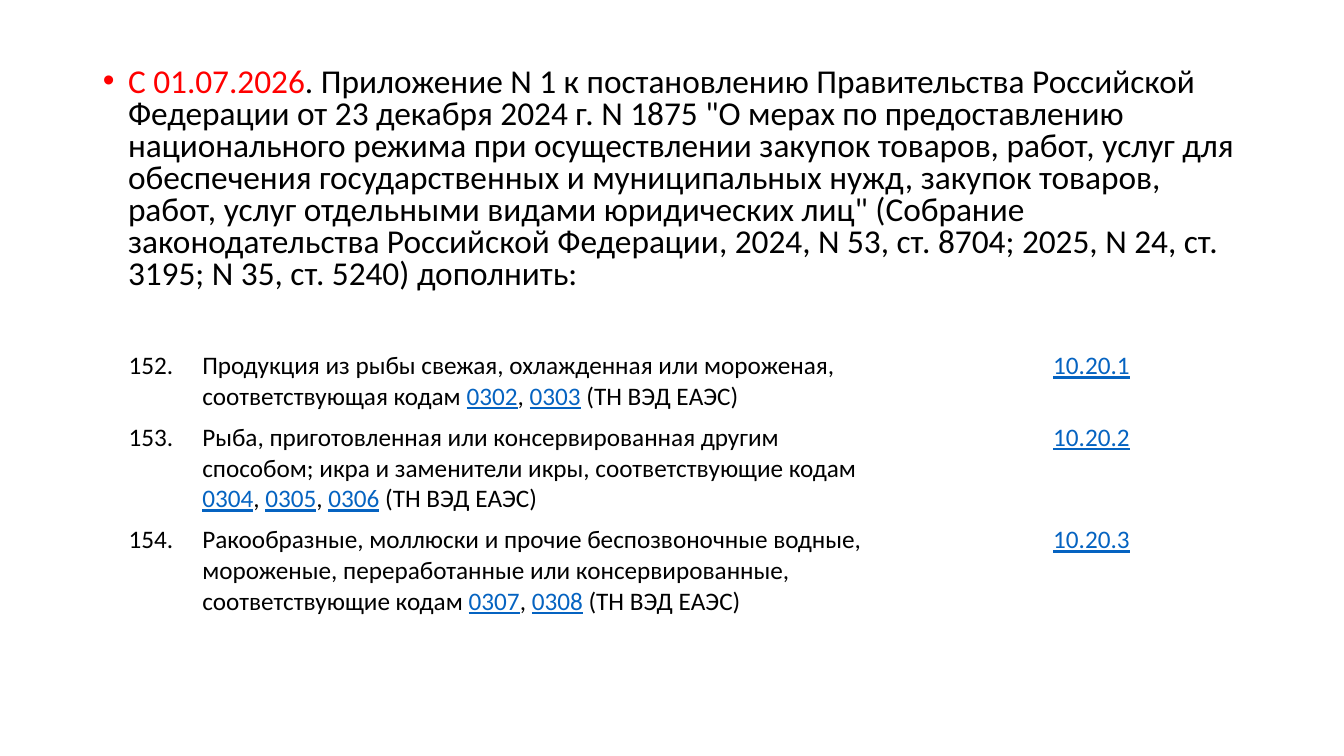
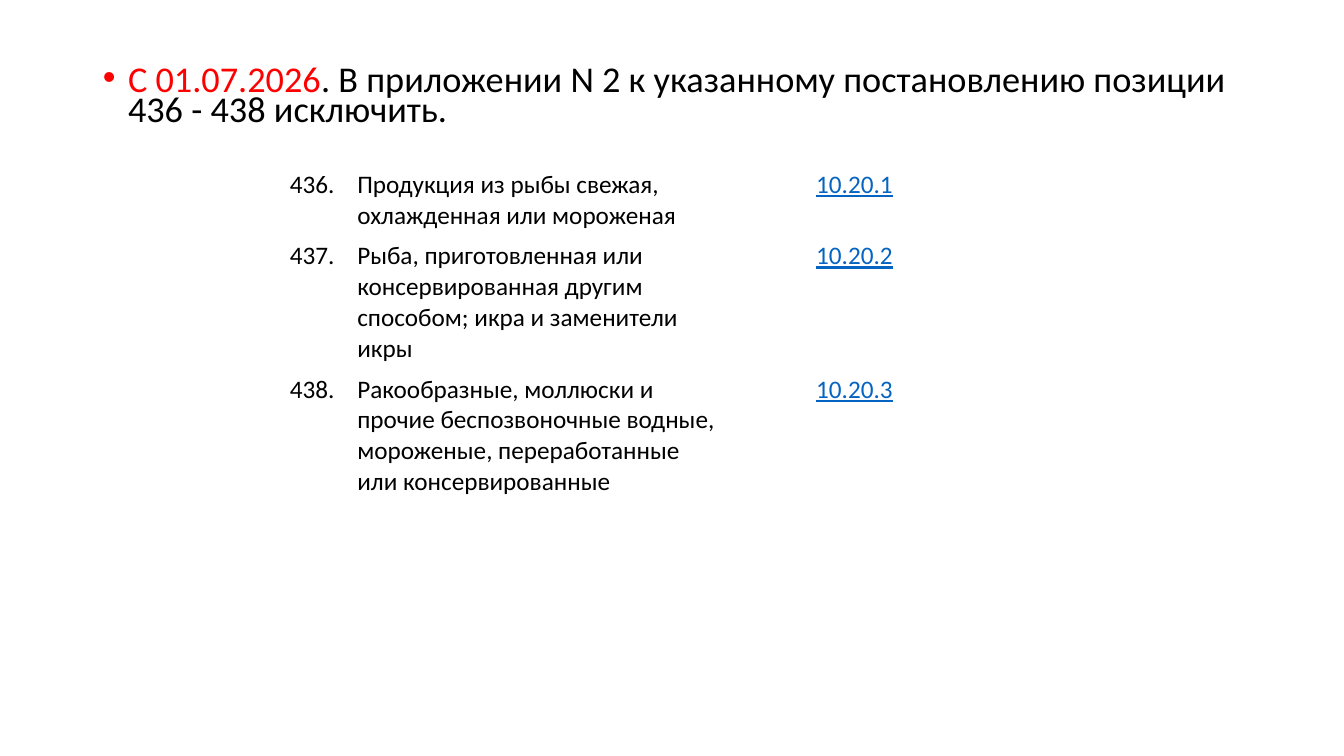
from lxml import etree
from pptx import Presentation
from pptx import util as u
from pptx.dml.color import RGBColor
from pptx.enum import text
from pptx.oxml import ns

COLORS = {"ink": "000000", "date": "FF0000", "code": "0563C1", "paper": "FFFFFF"}
FONT = "Calibri"
WIDTH, HEIGHT = 13.33, 7.5
START_DATE = "С 01.07.2026"
TABLE_SIZE = 18


def color(name):
    return RGBColor.from_string(COLORS[name])


def add_runs(paragraph, pieces, size):
    """Fill a paragraph with (wording, colour name) pieces; codes are underlined."""
    for wording, tone in pieces:
        run = paragraph.add_run()
        run.text = wording
        run.font.name, run.font.size = FONT, u.Pt(size)
        run.font.color.rgb = color(tone)
        run.font.underline = tone == "code"


def add_bullet(paragraph, tone, indent=0.25):
    props = paragraph._p.get_or_add_pPr()
    props.set("marL", str(u.Inches(indent)))
    props.set("indent", str(-u.Inches(indent)))
    bullet_color = etree.SubElement(props, ns.qn("a:buClr"))
    etree.SubElement(bullet_color, ns.qn("a:srgbClr"), val=COLORS[tone])
    etree.SubElement(props, ns.qn("a:buFont"), typeface="Arial")
    etree.SubElement(props, ns.qn("a:buChar"), char="•")


def fill_lead(body, box, wording, size, spacing):
    """Lead paragraph: red date followed by the amendment."""
    body.left, body.top, body.width, body.height = map(u.Inches, box)
    frame = body.text_frame
    frame.word_wrap = True
    frame.auto_size = text.MSO_AUTO_SIZE.NONE
    frame.vertical_anchor = text.MSO_ANCHOR.TOP
    lead = frame.paragraphs[0]
    add_bullet(lead, "date")
    lead.line_spacing, lead.space_before = spacing, u.Pt(0)
    add_runs(lead, [(START_DATE, "date"), (wording, "ink")], size)


def goods_pieces(goods, customs_codes):
    """Goods wording, with the customs codes it corresponds to, if any."""
    pieces = [(goods, "ink")]
    for position, code in enumerate(customs_codes):
        pieces += [(", " if position else " ", "ink"), (code, "code")]
    if customs_codes:
        pieces.append((" (ТН ВЭД ЕАЭС)", "ink"))
    return pieces


def add_positions(slide, box, shares, first_number, row_heights, positions):
    """Table of numbered positions: number, goods, product code."""
    table = slide.shapes.add_table(len(positions), len(shares), *map(u.Inches, box)).table
    table.first_row = table.horz_banding = False
    for column, share in zip(table.columns, shares):
        column.width = u.Inches(box[2] * share)
    for index, (goods, customs_codes) in enumerate(positions):
        table.rows[index].height = u.Inches(row_heights[index])
        contents = [
            [(f"{first_number + index}.", "ink")],
            goods_pieces(goods, customs_codes),
            [(f"10.20.{index + 1}", "code")],
        ]
        for column, pieces in enumerate(contents):
            cell = table.cell(index, column)
            cell.fill.solid()
            cell.fill.fore_color.rgb = color("paper")
            paragraph = cell.text_frame.paragraphs[0]
            if column != 1:
                paragraph.alignment = text.PP_ALIGN.CENTER
            add_runs(paragraph, pieces, TABLE_SIZE)


def add_amendment(deck, lead, positions):
    """One slide: lead paragraph above a table of positions."""
    slide = deck.slides.add_slide(deck.slide_layouts[1])
    title = slide.shapes.title
    title.element.getparent().remove(title.element)
    left, top, width = WIDTH * 0.069, HEIGHT * 0.083, WIDTH * 0.863
    fill_lead(slide.placeholders[1], (left, top, width, lead.pop("height")), **lead)
    add_positions(slide, **positions)


ADDED = [
    ("Продукция из рыбы свежая, охлажденная или мороженая, соответствующая кодам",
     ["0302", "0303"]),
    ("Рыба, приготовленная или консервированная другим способом; икра и заменители "
     "икры, соответствующие кодам", ["0304", "0305", "0306"]),
    ("Ракообразные, моллюски и прочие беспозвоночные водные, мороженые, "
     "переработанные или консервированные, соответствующие кодам", ["0307", "0308"]),
]
REMOVED = [
    ("Продукция из рыбы свежая, охлажденная или мороженая", []),
    ("Рыба, приготовленная или консервированная другим способом; икра и заменители "
     "икры", []),
    ("Ракообразные, моллюски и прочие беспозвоночные водные, мороженые, "
     "переработанные или консервированные", []),
]
ADDED_LEAD = (
    ". Приложение N 1 к постановлению Правительства Российской Федерации от 23 декабря "
    "2024 г. N 1875 \"О мерах по предоставлению национального режима при осуществлении "
    "закупок товаров, работ, услуг для обеспечения государственных и муниципальных нужд, "
    "закупок товаров, работ, услуг отдельными видами юридических лиц\" (Собрание "
    "законодательства Российской Федерации, 2024, N 53, ст. 8704; 2025, N 24, ст. 3195; "
    "N 35, ст. 5240) дополнить:"
)
REMOVED_LEAD = ". В приложении N 2 к указанному постановлению позиции 436 - 438 исключить."


def main():
    deck = Presentation()
    deck.slide_width, deck.slide_height = u.Inches(WIDTH), u.Inches(HEIGHT)
    # Positions added to appendix 1
    add_amendment(
        deck,
        dict(height=2.42, wording=ADDED_LEAD, size=23.8, spacing=0.8),
        dict(box=(1.09, 3.43, 11.66, 2.87), shares=(0.07, 0.6, 0.33),
             first_number=152, row_heights=(0.7, 1, 1.17), positions=ADDED),
    )
    # Positions removed from appendix 2
    add_amendment(
        deck,
        dict(height=0.74, wording=REMOVED_LEAD, size=25.9, spacing=0.7),
        dict(box=(2.75, 1.63, 6.94, 3.3), shares=(0.1, 0.55, 0.35),
             first_number=436, row_heights=(0.7, 1.3, 1.3), positions=REMOVED),
    )
    deck.save("out.pptx")


if __name__ == "__main__":
    main()
